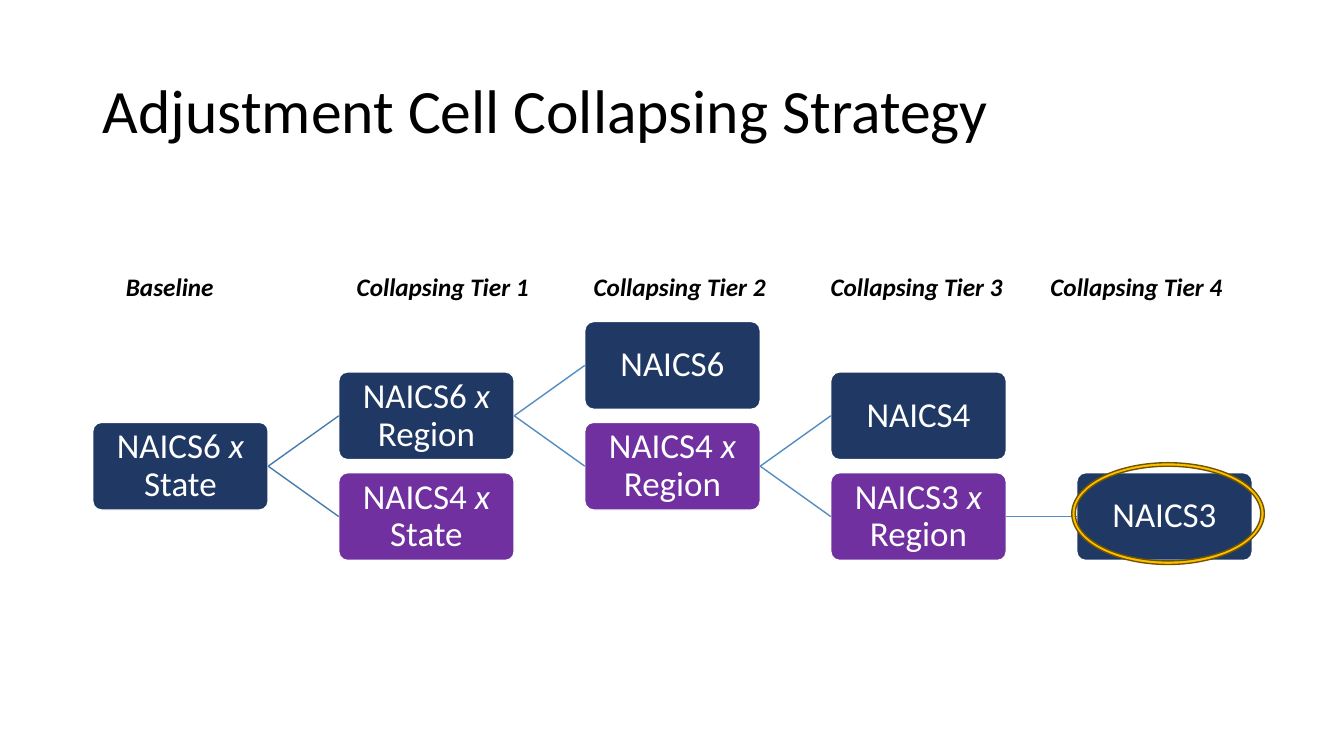
from lxml.etree import SubElement
from pptx import Presentation
from pptx.dml.color import RGBColor
from pptx.enum.shapes import MSO_CONNECTOR, MSO_SHAPE
from pptx.enum.text import MSO_ANCHOR, MSO_AUTO_SIZE, PP_ALIGN
from pptx.oxml.ns import qn
from pptx.util import Inches, Pt

NAVY, PURPLE, WHITE, BLACK = "203864", "7030A0", "FFFFFF", "000000"


def color(value):
    return RGBColor.from_string(value)


def write_text(shape, text, size, ink=BLACK, bold=False, italic=False,
               align=PP_ALIGN.LEFT, anchor=MSO_ANCHOR.TOP, spacing=1.0,
               inset=None, wrap=True, auto_size=MSO_AUTO_SIZE.NONE):
    """Write one paragraph; a lone "x" between words is set in italics."""
    frame = shape.text_frame
    frame.word_wrap = wrap
    frame.auto_size = auto_size
    frame.vertical_anchor = anchor
    if inset is not None:
        frame.margin_left = frame.margin_right = Inches(inset)
        frame.margin_top = frame.margin_bottom = Inches(inset)
    paragraph = frame.paragraphs[0]
    paragraph.alignment = align
    paragraph.line_spacing = spacing
    before, cross, after = text.partition(" x ")
    for part in filter(None, (before, cross, after)):
        run = paragraph.add_run()
        run.text = part
        run.font.name = "Calibri"
        run.font.size = Pt(size)
        run.font.bold = bold
        run.font.italic = italic or part == cross
        run.font.color.rgb = color(ink)


presentation = Presentation()
presentation.slide_width = Inches(13.33)
presentation.slide_height = Inches(7.5)
slide = presentation.slides.add_slide(presentation.slide_layouts[5])

# Title
title = slide.shapes.title
title.left, title.top = Inches(0.92), Inches(0.4)
title.width, title.height = Inches(11.5), Inches(1.45)
write_text(title, "Adjustment Cell Collapsing Strategy", 44,
           anchor=MSO_ANCHOR.MIDDLE, spacing=0.9)

# Cells of the tree: text, tier, half-row, fill
cells = [
    ("NAICS6 x State", 0, 2, NAVY),
    ("NAICS6 x Region", 1, 1, NAVY),
    ("NAICS4 x State", 1, 3, PURPLE),
    ("NAICS6", 2, 0, NAVY),
    ("NAICS4 x Region", 2, 2, PURPLE),
    ("NAICS4", 3, 1, NAVY),
    ("NAICS3 x Region", 3, 3, PURPLE),
    ("NAICS3", 4, 3, NAVY),
]
boxes = {}
for text, tier, half_row, fill in cells:
    box = slide.shapes.add_shape(
        MSO_SHAPE.ROUNDED_RECTANGLE,
        Inches(0.92 + 2.44 * tier), Inches(3.19 + 0.5 * half_row),
        Inches(1.74), Inches(0.87))
    box.adjustments[0] = 0.1
    box.shadow.inherit = False
    box.fill.solid()
    box.fill.fore_color.rgb = color(fill)
    box.line.color.rgb = color(WHITE)
    box.line.width = Pt(1)
    write_text(box, text, 25, ink=WHITE, align=PP_ALIGN.CENTER,
               anchor=MSO_ANCHOR.MIDDLE, spacing=0.9, inset=0.04)
    boxes[text] = box

# Branches from each cell to the cells of the next tier
branches = [
    ("NAICS6 x State", "NAICS6 x Region", "497CAB"),
    ("NAICS6 x State", "NAICS4 x State", "497CAB"),
    ("NAICS6 x Region", "NAICS6", "538DC1"),
    ("NAICS6 x Region", "NAICS4 x Region", "538DC1"),
    ("NAICS4 x Region", "NAICS4", "538DC1"),
    ("NAICS4 x Region", "NAICS3 x Region", "538DC1"),
    ("NAICS3 x Region", "NAICS3", "538DC1"),
]
for parent, child, line_color in branches:
    branch = slide.shapes.add_connector(MSO_CONNECTOR.STRAIGHT, 0, 0, 0, 0)
    branch.begin_connect(boxes[parent], 3)
    branch.end_connect(boxes[child], 1)
    branch.line.color.rgb = color(line_color)
    branch.line.width = Pt(1)
    SubElement(branch.element.spPr, qn("a:effectLst"))

# Ring around the last cell
ring = slide.shapes.add_shape(MSO_SHAPE.DONUT, Inches(10.63), Inches(4.59),
                              Inches(1.91), Inches(1.01))
ring.adjustments[0] = 0.035
ring.shadow.inherit = False
ring.fill.solid()
ring.fill.fore_color.rgb = color("FFC000")
ring.line.color.rgb = color("705400")
ring.line.width = Pt(1)

# Tier headings
headings = [
    ("Baseline", 1.15, 1.08),
    ("Collapsing Tier 1", 3.44, 1.93),
    ("Collapsing Tier 2", 5.79, 1.93),
    ("Collapsing Tier 3", 8.14, 1.93),
    ("Collapsing Tier 4", 10.32, 1.93),
]
for text, left, width in headings:
    heading = slide.shapes.add_textbox(Inches(left), Inches(2.64),
                                       Inches(width), Inches(0.4))
    write_text(heading, text, 18, bold=True, italic=True, wrap=False,
               auto_size=MSO_AUTO_SIZE.SHAPE_TO_FIT_TEXT)

presentation.save("out.pptx")
